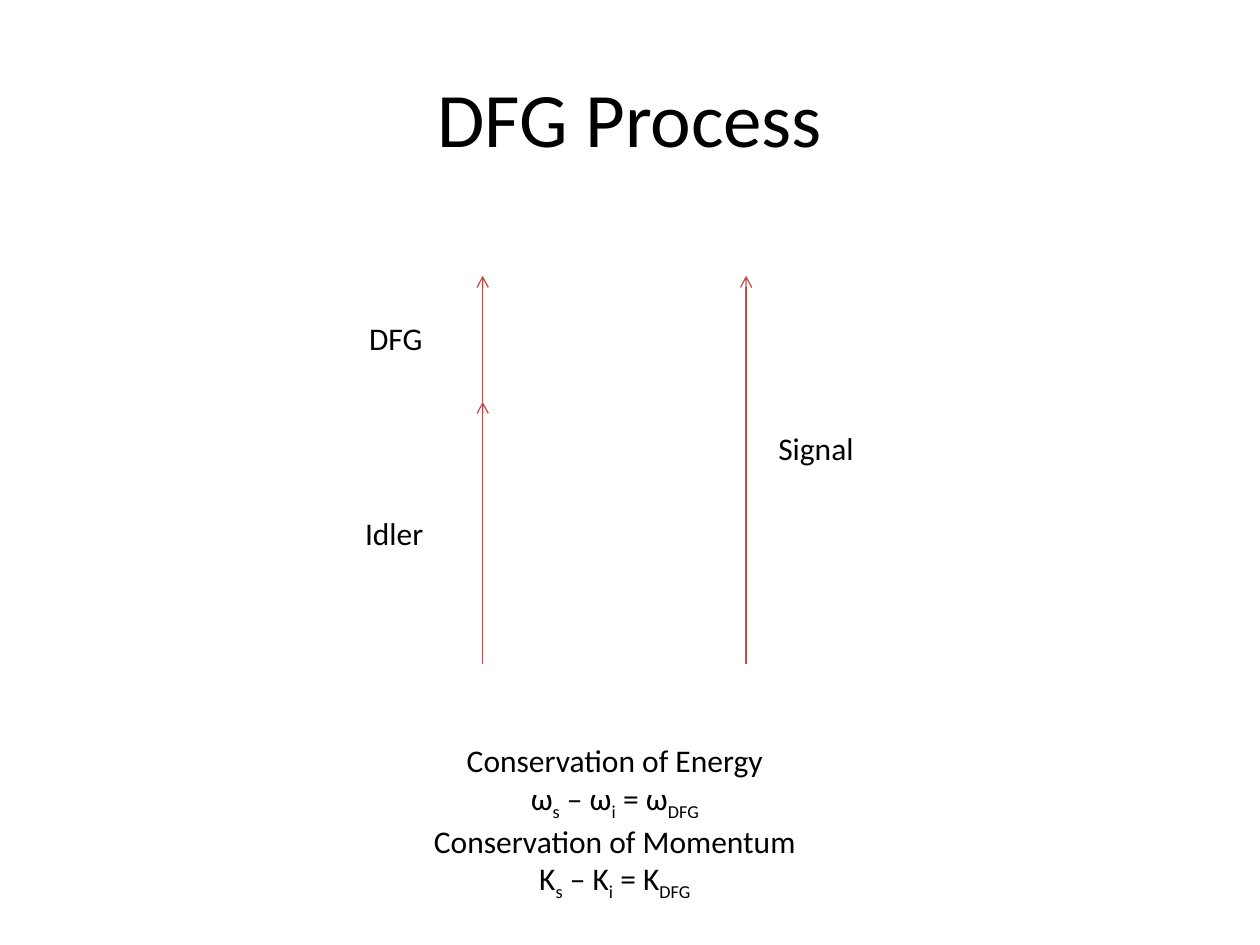
"""Build the DFG Process slide with its wave diagram and conservation laws."""
from dataclasses import dataclass

from lxml import etree
from pptx import Presentation
from pptx.dml.color import RGBColor
from pptx.enum import shapes, text
from pptx.oxml import ns
from pptx.slide import Slide
from pptx.text.text import TextFrame, _Paragraph
from pptx.util import Cm, Pt


@dataclass(frozen=True)
class Theme:
    """Colours, font and sizes of the slide."""
    font: str = "Calibri"
    ink: RGBColor = RGBColor(0x00, 0x00, 0x00)
    arrow: RGBColor = RGBColor(0xBF, 0x4C, 0x48)
    title_size: float = 44
    body_size: float = 18
    arrow_width: float = 0.75


@dataclass(frozen=True)
class Wave:
    """A vertical arrow and its label, in centimetres."""
    name: str
    x: float
    bottom: float
    top: float
    label_left: float
    label_top: float
    label_width: float


@dataclass(frozen=True)
class Law:
    """A conservation law and the symbol of the conserved quantity."""
    name: str
    symbol: str


THEME = Theme()
TOP, MIDDLE, BOTTOM = 5.56, 8.1, 13.39
LEFT_X, RIGHT_X = 9.73, 15.04
LABEL_HEIGHT = 1.02
WAVES = [
    Wave("Signal", RIGHT_X, BOTTOM, TOP, 15.44, 8.53, 8.69),
    Wave("Idler", LEFT_X, BOTTOM, MIDDLE, 7.11, 10.24, 2.11),
    Wave("DFG", LEFT_X, MIDDLE, TOP, 7.19, 6.3, 2.11),
]
LAWS = [Law("Conservation of Energy", "ω"), Law("Conservation of Momentum", "K")]
TERMS = [("", "s"), (" – ", "i"), (" = ", "DFG")]


def style(paragraph: _Paragraph, size: float, alignment: text.PP_ALIGN) -> None:
    """Apply the theme font and an alignment to a paragraph."""
    paragraph.alignment = alignment
    paragraph.font.name = THEME.font
    paragraph.font.size = Pt(size)
    paragraph.font.color.rgb = THEME.ink


def add_title(slide: Slide, title: str) -> None:
    """Place and fill the title placeholder."""
    shape = slide.shapes.title
    shape.left, shape.top, shape.width, shape.height = Cm(1.27), Cm(0.76), Cm(22.86), Cm(3.18)
    shape.text_frame.text = title
    shape.text_frame.vertical_anchor = text.MSO_ANCHOR.MIDDLE
    style(shape.text_frame.paragraphs[0], THEME.title_size, text.PP_ALIGN.CENTER)


def add_text_box(slide: Slide, left: float, top: float, width: float, height: float) -> TextFrame:
    """Add a wrapping text box that grows with its text."""
    frame = slide.shapes.add_textbox(Cm(left), Cm(top), Cm(width), Cm(height)).text_frame
    frame.word_wrap = True
    frame.auto_size = text.MSO_AUTO_SIZE.SHAPE_TO_FIT_TEXT
    return frame


def add_arrow(slide: Slide, wave: Wave) -> None:
    """Draw the upward arrow of a wave."""
    connector = slide.shapes.add_connector(
        shapes.MSO_CONNECTOR.STRAIGHT, Cm(wave.x), Cm(wave.bottom), Cm(wave.x), Cm(wave.top))
    connector.line.color.rgb = THEME.arrow
    connector.line.width = Pt(THEME.arrow_width)
    etree.SubElement(connector.line._get_or_add_ln(), ns.qn("a:tailEnd"), type="arrow")
    etree.SubElement(connector._element.spPr, ns.qn("a:effectLst"))


def add_label(slide: Slide, wave: Wave) -> None:
    """Write the name of a wave."""
    frame = add_text_box(slide, wave.label_left, wave.label_top, wave.label_width, LABEL_HEIGHT)
    frame.text = wave.name
    style(frame.paragraphs[0], THEME.body_size, text.PP_ALIGN.LEFT)


def write_equation(paragraph: _Paragraph, symbol: str) -> None:
    """Write the equation of a law with its subscripts."""
    for operator, subscript in TERMS:
        paragraph.add_run().text = operator + symbol
        run = paragraph.add_run()
        run.text = subscript
        run._r.get_or_add_rPr().set("baseline", "-25000")


def add_laws(slide: Slide, laws: list[Law]) -> None:
    """Write each law's name above its equation."""
    frame = add_text_box(slide, 5.41, 14.81, 13.97, 3.33)
    for index, law in enumerate(laws):
        heading = frame.add_paragraph() if index else frame.paragraphs[0]
        heading.text = law.name
        equation = frame.add_paragraph()
        write_equation(equation, law.symbol)
        for paragraph in (heading, equation):
            style(paragraph, THEME.body_size, text.PP_ALIGN.CENTER)


def main() -> None:
    """Build and save the presentation."""
    presentation = Presentation()
    presentation.slide_width, presentation.slide_height = Cm(25.4), Cm(19.05)
    slide = presentation.slides.add_slide(presentation.slide_layouts[5])
    add_title(slide, "DFG Process")
    for wave in WAVES:
        add_arrow(slide, wave)
    for wave in WAVES:
        add_label(slide, wave)
    add_laws(slide, LAWS)
    presentation.save("out.pptx")


if __name__ == "__main__":
    main()
